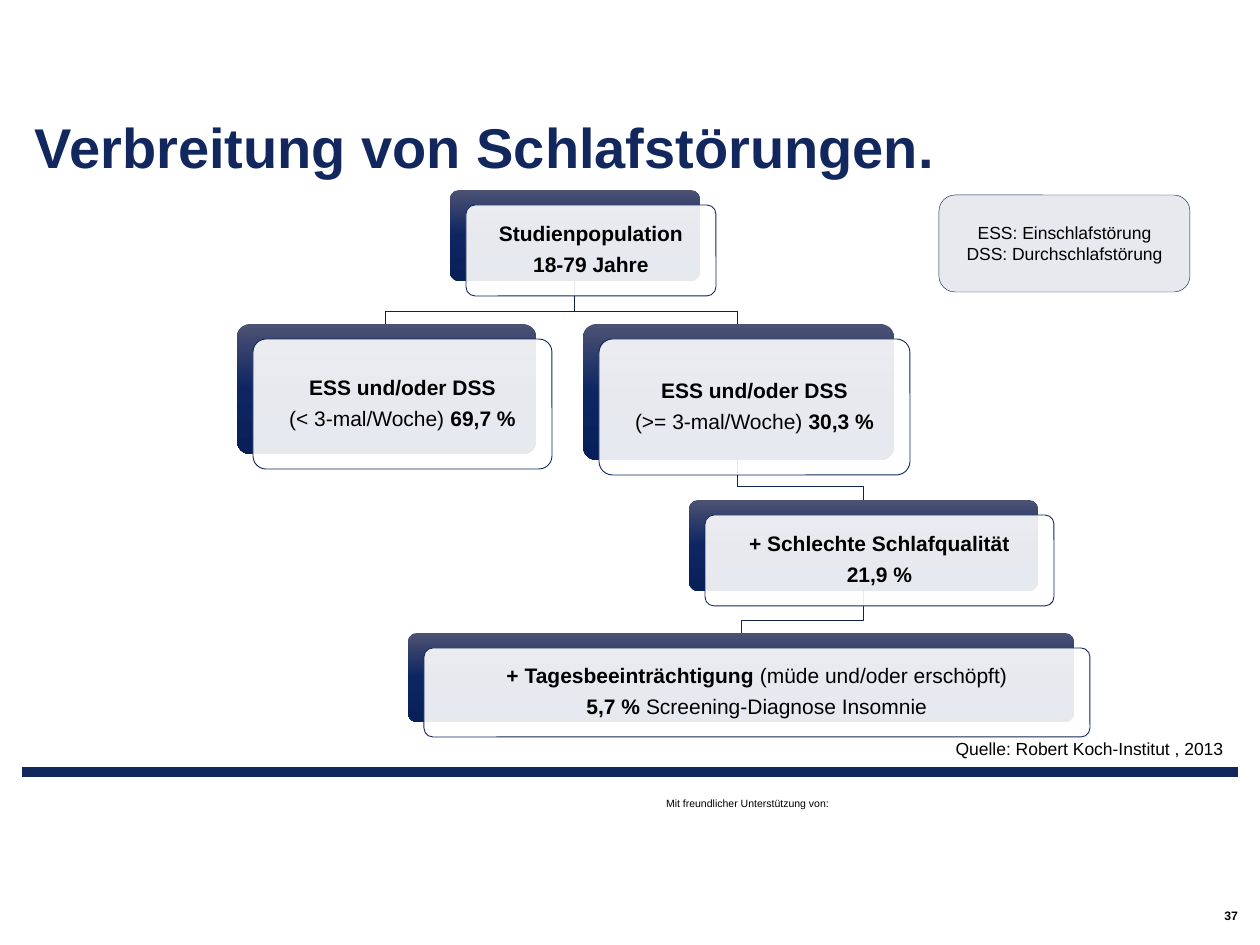
from copy import deepcopy
from dataclasses import dataclass

from lxml import etree
from pptx import Presentation
from pptx.dml.color import RGBColor
from pptx.enum.shapes import MSO_CONNECTOR, MSO_SHAPE
from pptx.enum.text import MSO_ANCHOR, PP_ALIGN
from pptx.oxml.ns import qn
from pptx.util import Emu, Pt

LEFT, CENTER, RIGHT = PP_ALIGN.LEFT, PP_ALIGN.CENTER, PP_ALIGN.RIGHT
TOP, MIDDLE, BOTTOM = MSO_ANCHOR.TOP, MSO_ANCHOR.MIDDLE, MSO_ANCHOR.BOTTOM
ROUNDED = MSO_SHAPE.ROUNDED_RECTANGLE
STRAIGHT = MSO_CONNECTOR.STRAIGHT
PX_PER_INCH = 126


def px(value):
    return Emu(round(value * 914400 / PX_PER_INCH))


@dataclass(frozen=True)
class Theme:
    font: str = "Arial"
    navy: str = "11275D"
    black: str = "000000"
    white: str = "FFFFFF"
    legend: str = "E7E9EE"
    branch: str = "0E1F4A"
    twig: str = "0F2354"
    gradient: tuple = ((0, "4C5273"), (0.5, "0D2561"), (1, "082059"))
    title_size: int = 32
    node_size: int = 12
    note_size: int = 10
    number_size: int = 7
    sponsor_size: int = 6


class SlideBuilder:
    def __init__(self, page, theme):
        self.page = page
        self.theme = theme

    def fill_text(self, box, lines, size, color=None, bold=None, align=LEFT,
                  anchor=TOP, insets=(13, 6), spacing=None, after=None):
        frame = box.text_frame
        frame.word_wrap = True
        frame.vertical_anchor = anchor
        frame.margin_left = frame.margin_right = px(insets[0])
        frame.margin_top = frame.margin_bottom = px(insets[1])
        for index, line in enumerate(lines):
            para = frame.add_paragraph() if index else frame.paragraphs[0]
            para.alignment = align
            para.line_spacing = spacing
            para.space_after = after
            para.font.name = self.theme.font
            para.font.size = Pt(size)
            para.font.bold = bold
            para.font.color.rgb = RGBColor.from_string(color or self.theme.black)
            for text, strong in [(line, None)] if isinstance(line, str) else line:
                span = para.add_run()
                span.text = text
                span.font.bold = strong

    def text(self, area, lines, size, **style):
        box = self.page.shapes.add_textbox(*map(px, area))
        self.fill_text(box, lines, size, **style)

    def rounded(self, area, fill=None, line_width=None, corner=None):
        box = self.page.shapes.add_shape(ROUNDED, *map(px, area))
        box.shadow.inherit = False
        if corner:
            box.adjustments[0] = corner
        if fill:
            box.fill.solid()
            box.fill.fore_color.rgb = RGBColor.from_string(fill)
        if line_width:
            box.line.color.rgb = RGBColor.from_string(self.theme.navy)
            box.line.width = Pt(line_width)
        else:
            box.line.fill.background()
        return box

    def shade(self, box):
        box.fill.gradient()
        box.fill.gradient_angle = 270
        stop_list = box._element.spPr.find(qn("a:gradFill")).find(qn("a:gsLst"))
        stop_list.insert(1, deepcopy(stop_list[0]))
        for stop, (position, color) in zip(box.fill.gradient_stops, self.theme.gradient):
            stop.position = position
            stop.color.rgb = RGBColor.from_string(color)

    def node(self, area, lines):
        self.shade(self.rounded(area, corner=0.1))
        left, top, width, height = area
        front = self.rounded((left + 16, top + 15, width, height),
                             self.theme.white, 0.5, 0.1)
        color = front._element.spPr.find(qn("a:solidFill"))[0]
        etree.SubElement(color, qn("a:alpha")).set("val", "90000")
        self.fill_text(front, lines, self.theme.node_size, align=CENTER,
                       anchor=MIDDLE, insets=(6, 6), spacing=0.9, after=Pt(4.8))

    def link(self, parent, child, color):
        start = parent[0] + parent[2] // 2
        end = child[0] + child[2] // 2
        bend = child[1] - 13
        outline = self.page.shapes.build_freeform(px(start), px(parent[1] + parent[3]))
        corners = [(start, bend), (end, bend), (end, child[1])]
        outline.add_line_segments([(px(x), px(y)) for x, y in corners], close=False)
        line = outline.convert_to_shape()
        line.shadow.inherit = False
        line.fill.background()
        line.line.color.rgb = RGBColor.from_string(color)
        line.line.width = Pt(0.5)

    def rule(self, left, right, y, width):
        line = self.page.shapes.add_connector(STRAIGHT, px(left), px(y), px(right), px(y))
        line.line.color.rgb = RGBColor.from_string(self.theme.navy)
        line.line.width = Pt(width)
        etree.SubElement(line._element.spPr, qn("a:effectLst"))


def main():
    deck = Presentation()
    deck.slide_width, deck.slide_height = px(1260), px(945)
    theme = Theme()
    slide = SlideBuilder(deck.slides.add_slide(deck.slide_layouts[6]), theme)

    slide.rule(22, 1238, 772, 5.67)
    slide.text((653, 791, 256, 25), ["Mit freundlicher Unterstützung von:"],
               theme.sponsor_size)
    slide.text((22, 49, 1216, 132), ["Verbreitung von Schlafstörungen."],
               theme.title_size, color=theme.navy, bold=True, anchor=BOTTOM,
               insets=(13, 0), spacing=0.9)
    slide.text((812, 906, 426, 20), ["37"], theme.number_size, bold=True,
               align=RIGHT, anchor=MIDDLE, insets=(0, 0))

    areas = {
        "population": (450, 190, 250, 91),
        "rare": (237, 324, 299, 130),
        "frequent": (583, 324, 311, 136),
        "quality": (689, 500, 349, 91),
        "daytime": (408, 633, 666, 89),
    }
    links = [
        ("quality", "daytime", theme.twig),
        ("frequent", "quality", theme.twig),
        ("population", "frequent", theme.branch),
        ("population", "rare", theme.branch),
    ]
    for parent, child, color in links:
        slide.link(areas[parent], areas[child], color)

    disorder = [("ESS und/oder DSS", True)]
    labels = {
        "population": [[("Studienpopulation", True)], [("18-79 Jahre", True)]],
        "rare": [disorder, [("(< 3-mal/Woche) ", False), ("69,7 %", True)]],
        "frequent": [disorder, [("(>= 3-mal/Woche) ", False), ("30,3 %", True)]],
        "quality": [[("+ Schlechte Schlafqualität", True)], [("21,9 %", True)]],
        "daytime": [
            [("+ Tagesbeeinträchtigung ", True), ("(müde und/oder erschöpft)", False)],
            [("5,7 % ", True), ("Screening-Diagnose Insomnie", False)],
        ],
    }
    for name, lines in labels.items():
        slide.node(areas[name], lines)

    slide.text((800, 732, 436, 34), ["Quelle: Robert Koch-Institut , 2013"],
               theme.note_size, align=RIGHT)
    legend = slide.rounded((939, 195, 251, 97), theme.legend, 0.25)
    slide.fill_text(legend, ["ESS: Einschlafstörung", "DSS: Durchschlafstörung"],
                    theme.note_size, align=CENTER, anchor=MIDDLE)
    deck.save("out.pptx")


if __name__ == "__main__":
    main()
